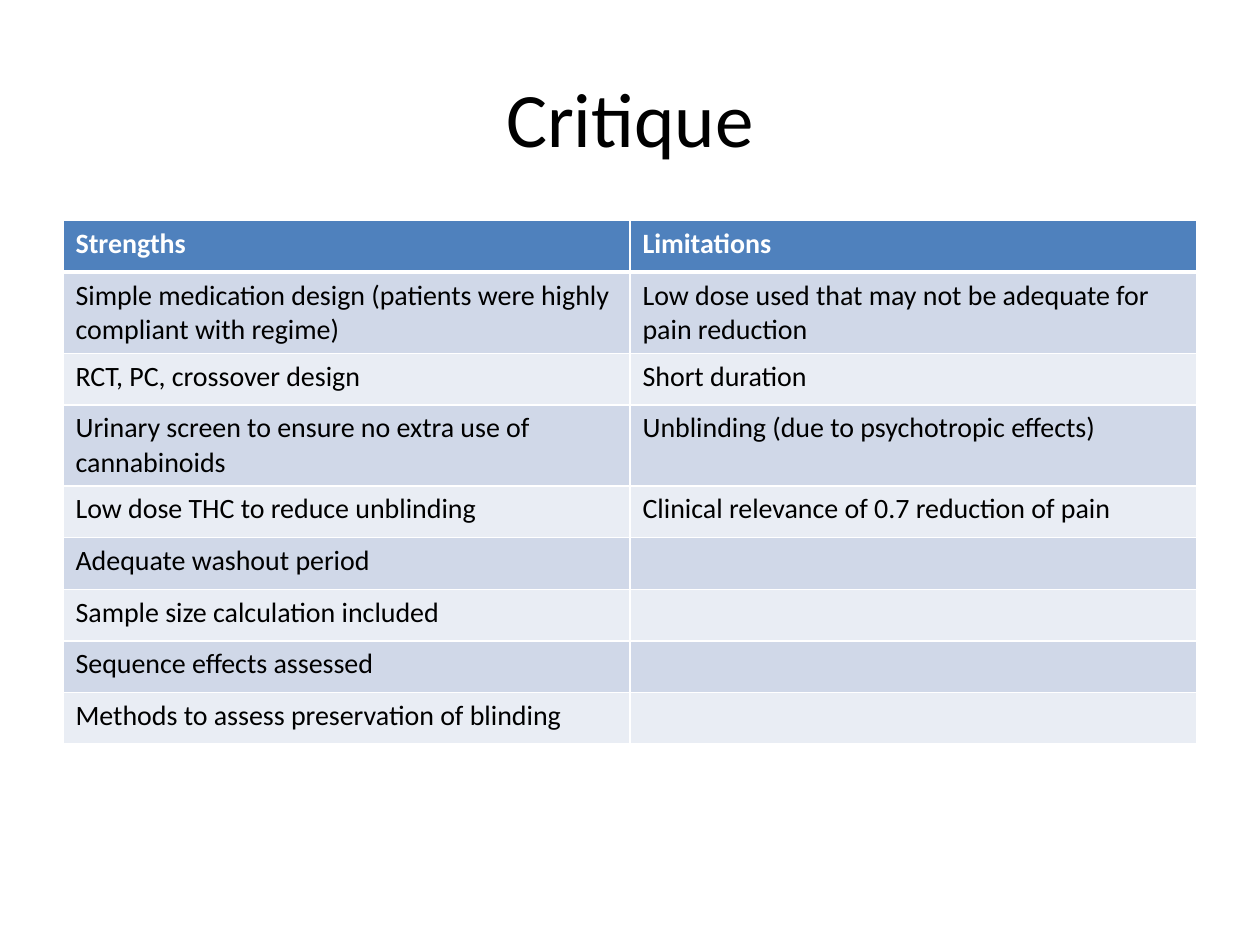
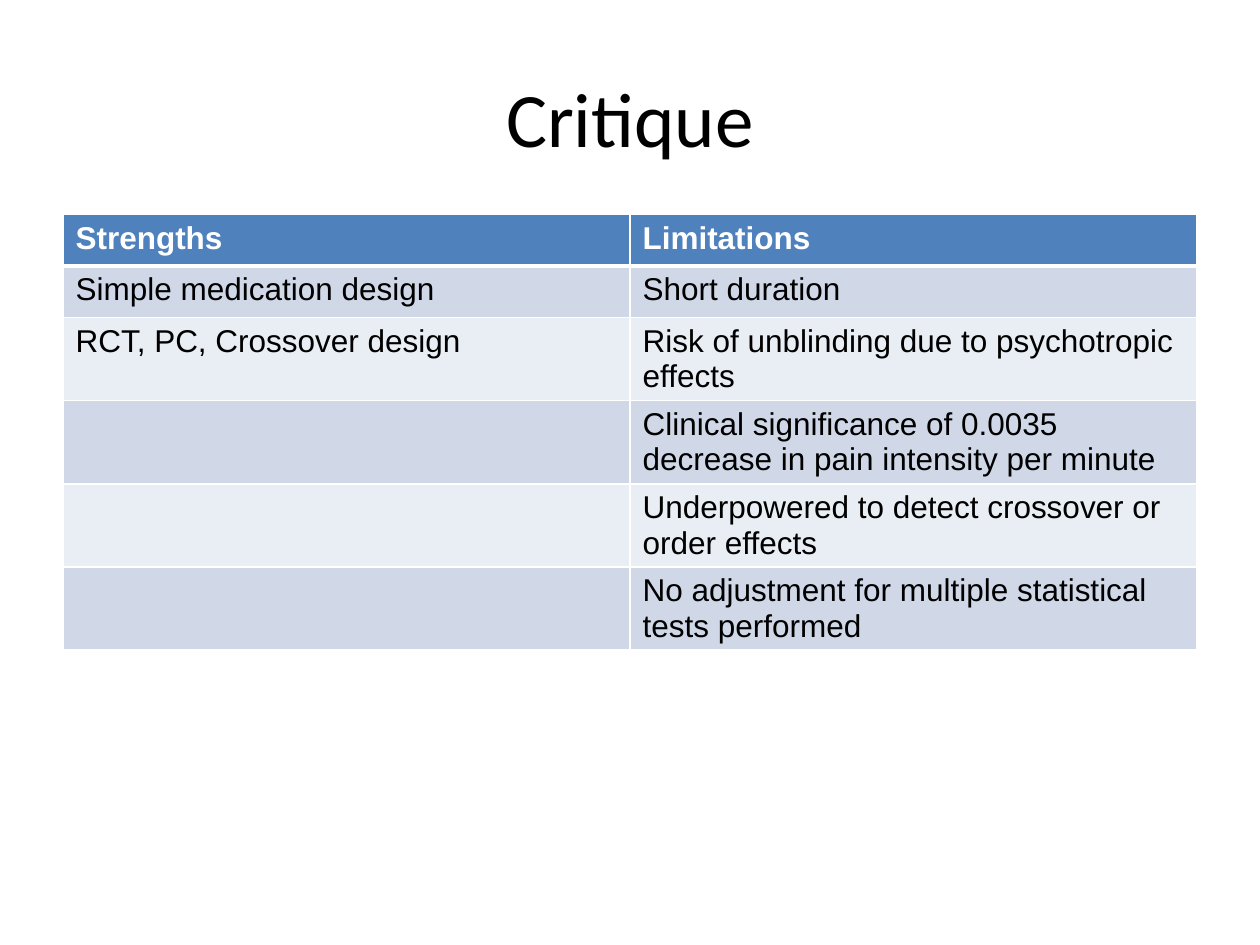
from dataclasses import dataclass

from lxml import etree
from pptx import Presentation
from pptx.dml.color import RGBColor
from pptx.enum.text import MSO_ANCHOR, PP_ALIGN
from pptx.oxml.ns import qn
from pptx.util import Inches, Pt

CENTER = PP_ALIGN.CENTER
MIDDLE = MSO_ANCHOR.MIDDLE
TITLE_ONLY = 5


@dataclass(frozen=True)
class Theme:
    """Colours, fonts and type sizes shared by the slides."""
    black: str = "000000"
    white: str = "FFFFFF"
    header: str = "4F81BD"
    bands: tuple = ("D0D8E8", "E9EDF4")
    title_font: str = "Calibri"
    title_size: int = 44
    thin: int = 1
    thick: int = 3


# Content: top, font and size of each table, then its rows
HEADINGS = ("Strengths", "Limitations")
CRITIQUES = [
    {
        "top": 1.75, "font": "Calibri", "size": 16,
        "rows": [
            ("Simple medication design (patients were highly compliant with regime)",
             "Low dose used that may not be adequate for pain reduction"),
            ("RCT, PC, crossover design", "Short duration"),
            ("Urinary screen to ensure no extra use of cannabinoids",
             "Unblinding (due to psychotropic effects)"),
            ("Low dose THC to reduce unblinding",
             "Clinical relevance of 0.7 reduction of pain"),
            ("Adequate washout period", ""),
            ("Sample size calculation included", ""),
            ("Sequence effects assessed", ""),
            ("Methods to assess preservation of blinding", ""),
        ],
    },
    {
        "top": 1.7, "font": "Arial", "size": 18,
        "rows": [
            ("Simple medication design", "Short duration"),
            ("RCT, PC, Crossover design",
             "Risk of unblinding due to psychotropic effects"),
            ("", "Clinical significance of 0.0035 decrease in pain intensity per minute"),
            ("", "Underpowered to detect crossover or order effects"),
            ("", "No adjustment for multiple statistical tests performed"),
        ],
    },
]


class CritiqueDeck:
    """Holds the theme and the current slide."""
    left, width, row_height = 0.5, 9, 0.41

    def __init__(self, theme):
        self.theme = theme
        self.deck = Presentation()
        self.deck.slide_width = Inches(10)
        self.deck.slide_height = Inches(7.5)
        self.page = None

    def add_page(self):
        layout = self.deck.slide_layouts[TITLE_ONLY]
        self.page = self.deck.slides.add_slide(layout)
        fill = self.page.background.fill
        fill.solid()
        fill.fore_color.rgb = RGBColor.from_string(self.theme.white)

    def add_span(self, para, text, color, **font_values):
        span = para.add_run()
        span.text = text
        span.font.color.rgb = RGBColor.from_string(color)
        for name, value in font_values.items():
            setattr(span.font, name, value)

    def add_title(self, text):
        box = self.page.shapes.title
        places = {"left": self.left, "top": 0.3, "width": self.width, "height": 1.25}
        for name, value in places.items():
            setattr(box, name, Inches(value))
        box.text_frame.vertical_anchor = MIDDLE
        para = box.text_frame.paragraphs[0]
        para.alignment = CENTER
        self.add_span(para, text, self.theme.black, name=self.theme.title_font,
                      size=Pt(self.theme.title_size))

    def add_borders(self, cell, widths):
        properties = cell._tc.get_or_add_tcPr()
        for side, width in widths.items():
            line = etree.SubElement(properties, qn(f"a:ln{side}"), w=str(Pt(width)))
            fill = etree.SubElement(line, qn("a:solidFill"))
            etree.SubElement(fill, qn("a:srgbClr"), val=self.theme.white)

    def add_table(self, top, font, size, rows):
        theme = self.theme
        lines = [HEADINGS, *rows]
        table = self.page.shapes.add_table(
            len(lines), len(HEADINGS), Inches(self.left), Inches(top),
            Inches(self.width), Inches(self.row_height * len(lines))).table
        for row_index, texts in enumerate(lines):
            is_header = row_index == 0
            band = theme.header if is_header else theme.bands[(row_index - 1) % 2]
            # A thick rule parts the header from the first row
            widths = {"L": theme.thin, "R": theme.thin,
                      "T": theme.thick if row_index == 1 else theme.thin,
                      "B": theme.thick if is_header else theme.thin}
            for column, text in enumerate(texts):
                cell = table.cell(row_index, column)
                self.add_borders(cell, widths)
                cell.fill.solid()
                cell.fill.fore_color.rgb = RGBColor.from_string(band)
                if text:
                    self.add_span(cell.text_frame.paragraphs[0], text,
                                  theme.white if is_header else theme.black,
                                  name=font, size=Pt(size), bold=is_header)


def main():
    critique = CritiqueDeck(Theme())
    for table_values in CRITIQUES:
        critique.add_page()
        critique.add_title("Critique")
        critique.add_table(**table_values)
    critique.deck.save("out.pptx")


if __name__ == "__main__":
    main()
